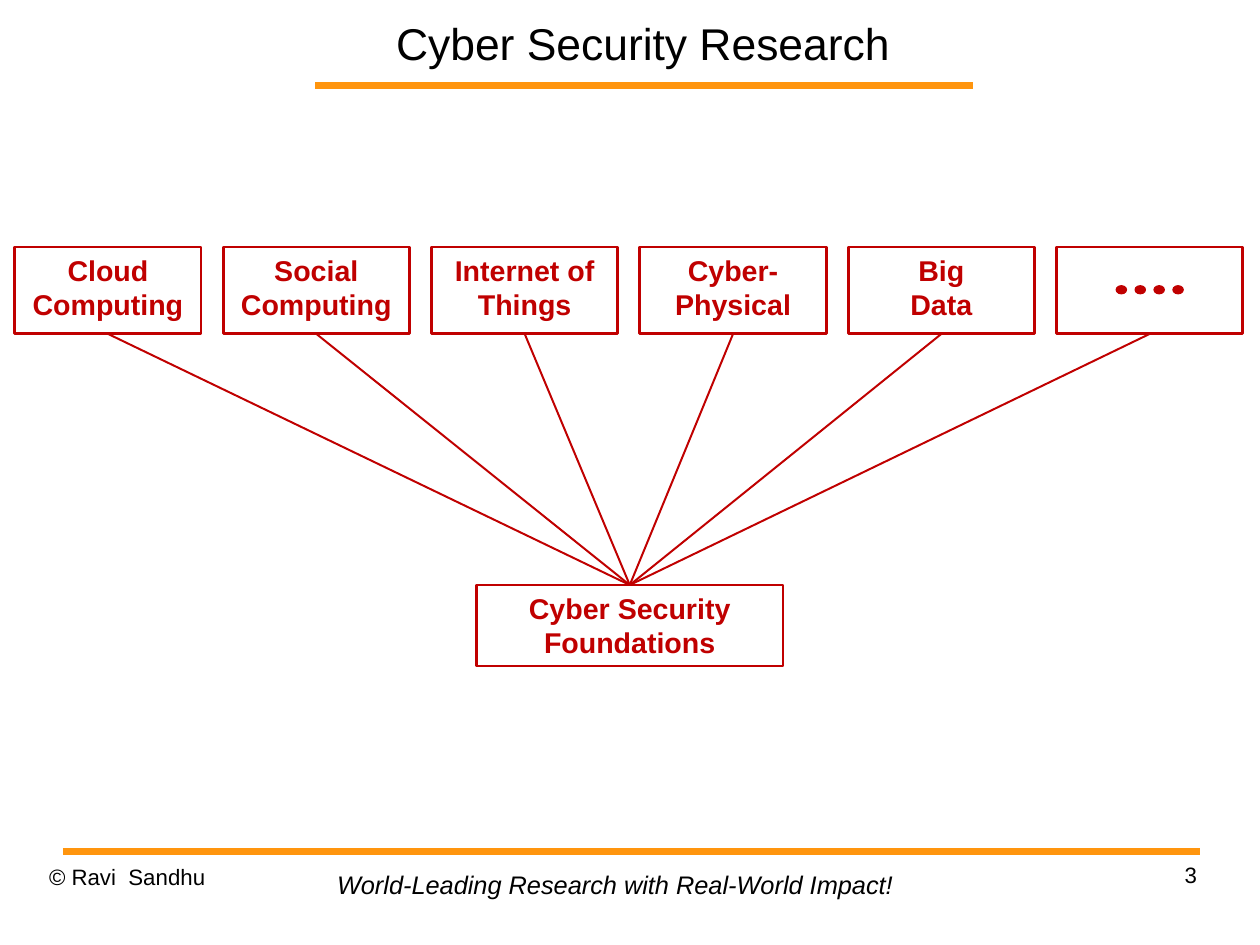
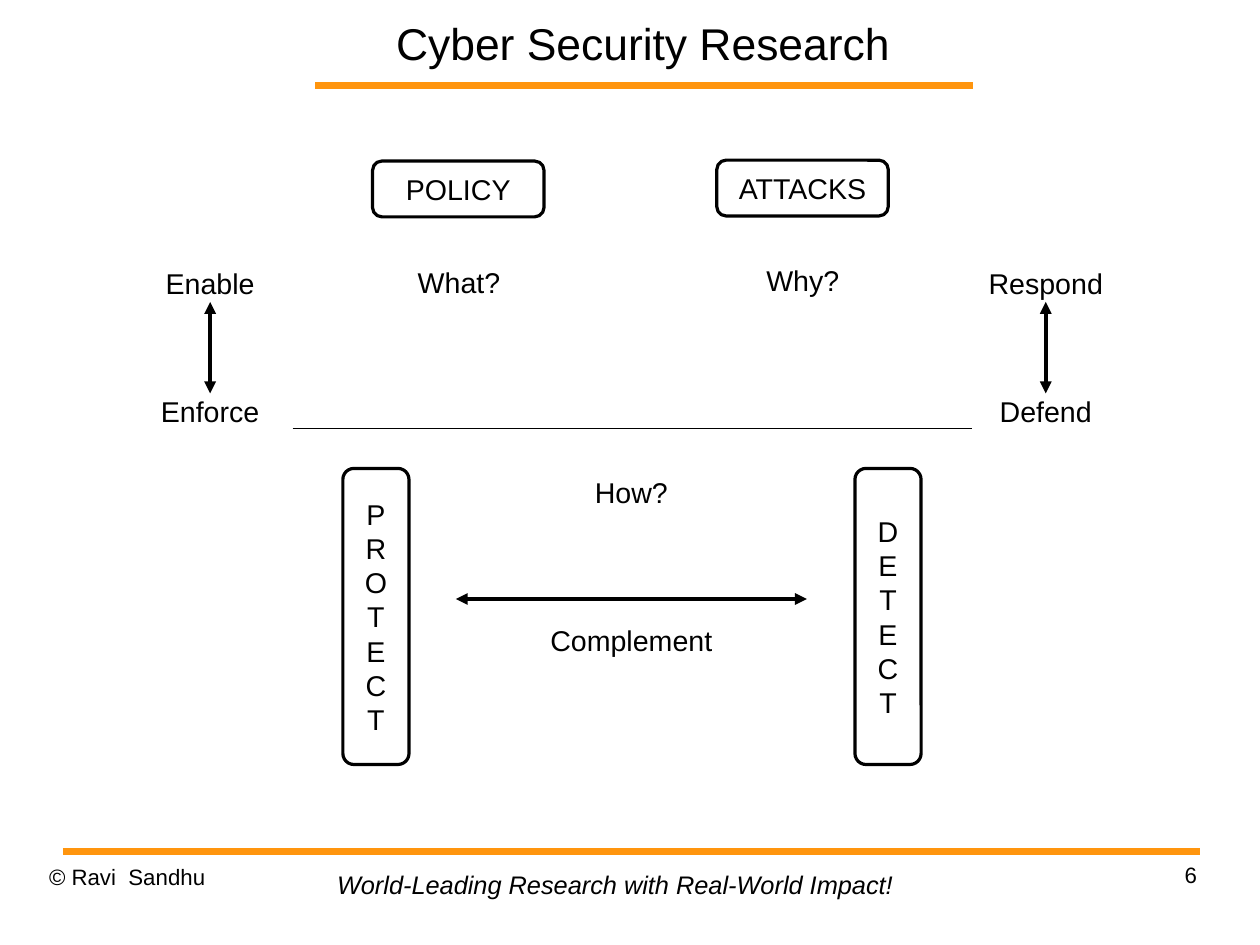
from pptx import Presentation
from pptx.dml.color import RGBColor
from pptx.enum.shapes import MSO_CONNECTOR, MSO_SHAPE
from pptx.enum.text import MSO_ANCHOR, PP_ALIGN
from pptx.oxml.ns import qn
from pptx.util import Cm, Pt
from lxml import etree

RECTANGLE = MSO_SHAPE.RECTANGLE
ROUNDED = MSO_SHAPE.ROUNDED_RECTANGLE
OVAL = MSO_SHAPE.OVAL
STRAIGHT = MSO_CONNECTOR.STRAIGHT
TOP, MIDDLE = MSO_ANCHOR.TOP, MSO_ANCHOR.MIDDLE
LEFT, CENTER, RIGHT = PP_ALIGN.LEFT, PP_ALIGN.CENTER, PP_ALIGN.RIGHT
TOP_SIDE, BOTTOM_SIDE = 0, 2

FONT = "Arial"
BLACK, WHITE, ORANGE, RED = "000000", "FFFFFF", "FF950E", "C00000"

TITLE = "Cyber Security Research"
COPYRIGHT = "© Ravi  Sandhu"
SLOGAN = "World-Leading Research with Real-World Impact!"
SHARED_RULES = [(7.01, 1.9, 21.62, 1.9), (1.4, 18.92, 26.67, 18.92)]

AREAS = [
    ["Cloud Computing"],
    ["Social Computing"],
    ["Internet of Things"],
    ["Cyber-Physical"],
    ["Big", "Data"],
    [],
]
AREA_LEFT, AREA_TOP, AREA_WIDTH, AREA_HEIGHT, AREA_PITCH = 0.33, 5.49, 4.14, 1.93, 4.63
FOUNDATION = ["Cyber Security", "Foundations"]
FOUNDATION_BOX = (10.59, 13, 6.81, 1.8)
DOT_COUNT, DOT_WIDTH, DOT_HEIGHT, DOT_PITCH, DOT_TOP = 4, 0.23, 0.18, 0.42, 6.35

GOALS = [("POLICY", 8.28, 3.58), ("ATTACKS", 15.93, 3.56)]
GOAL_SIZE = (3.81, 1.24)
MEANS = [("PROTECT", 7.62, 10.41), ("DETECT", 19, 10.41)]
MEANS_SIZE = (1.47, 6.58)
LABELS = [
    ("What?", 10.2, 5.77, 2.36),
    ("Why?", 17.84, 5.72, 2.16),
    ("How?", 14.03, 10.44, 2.16),
    ("Complement", 14.03, 13.72, 4.14),
    ("Enable", 4.67, 5.79, 2.51),
    ("Enforce", 4.67, 8.64, 2.72),
    ("Respond", 23.24, 5.79, 3.07),
    ("Defend", 23.24, 8.64, 2.59),
]
LABEL_HEIGHT = 1.02
DIVIDER = (6.5, 9.53, 21.59, 9.53)
ARROWS = [
    (10.13, 13.31, 17.93, 13.31),
    (4.67, 8.74, 4.67, 6.71),
    (23.24, 8.74, 23.24, 6.71),
]


def color(value):
    return RGBColor.from_string(value)


def write(shape, lines, size, ink=BLACK, align=CENTER, anchor=TOP, bold=False,
          italic=False, wrap=True, inset=None, spacing=None):
    frame = shape.text_frame
    frame.word_wrap = wrap
    frame.vertical_anchor = anchor
    if inset is not None:
        frame.margin_left = frame.margin_right = Cm(inset)
        frame.margin_top = frame.margin_bottom = Cm(inset)
    for index, line in enumerate(lines):
        paragraph = frame.add_paragraph() if index else frame.paragraphs[0]
        paragraph.alignment = align
        if spacing:
            paragraph.line_spacing = spacing
        run = paragraph.add_run()
        run.text = line
        run.font.name = FONT
        run.font.size = Pt(size)
        run.font.bold = bold
        run.font.italic = italic
        run.font.color.rgb = color(ink)


def add_text(slide, box, text, size, **style):
    shape = slide.shapes.add_textbox(*map(Cm, box))
    write(shape, [text], size, **style)


def add_box(slide, kind, box, line, width, fill=None):
    shape = slide.shapes.add_shape(kind, *map(Cm, box))
    shape.shadow.inherit = False
    if fill:
        shape.fill.solid()
        shape.fill.fore_color.rgb = color(fill)
    else:
        shape.fill.background()
    shape.line.color.rgb = color(line)
    shape.line.width = Pt(width)
    return shape


def add_line(slide, ends, ink, width, arrows=False):
    connector = slide.shapes.add_connector(STRAIGHT, *map(Cm, ends))
    connector.line.color.rgb = color(ink)
    connector.line.width = Pt(width)
    properties = connector._element.spPr
    if arrows:
        outline = properties.find(qn("a:ln"))
        for end in ("a:headEnd", "a:tailEnd"):
            etree.SubElement(outline, qn(end)).set("type", "triangle")
    etree.SubElement(properties, qn("a:effectLst"))
    return connector


def add_base_slide(presentation, number):
    slide = presentation.slides.add_slide(presentation.slide_layouts[6])
    for ends in SHARED_RULES:
        add_line(slide, ends, ORANGE, 4.31)
    add_text(slide, (20.07, 19.13, 6.53, 1.45), number, 14, align=RIGHT, inset=0, spacing=1.01)
    add_text(slide, (1.09, 19.18, 6.53, 1.45), COPYRIGHT, 14, align=LEFT, inset=0, spacing=1.01)
    add_text(slide, (7.24, 19.18, 12.9, 0.94), SLOGAN, 16, align=LEFT, italic=True, wrap=False)
    add_text(slide, (6.12, 0, 16.33, 1.9), TITLE, 28, anchor=MIDDLE, inset=0)
    return slide


def build_areas(presentation):
    slide = add_base_slide(presentation, "3")
    foundation = add_box(slide, RECTANGLE, FOUNDATION_BOX, RED, 1.75)
    write(foundation, FOUNDATION, 18, RED, bold=True)

    area_boxes = []
    for index, lines in enumerate(AREAS):
        left = AREA_LEFT + index * AREA_PITCH
        area = add_box(slide, RECTANGLE, (left, AREA_TOP, AREA_WIDTH, AREA_HEIGHT), RED, 1.75)
        write(area, lines, 18, RED, bold=True)
        area_boxes.append(area)

    dots_width = (DOT_COUNT - 1) * DOT_PITCH + DOT_WIDTH
    dots_left = left + (AREA_WIDTH - dots_width) / 2
    for index in range(DOT_COUNT):
        dot = (dots_left + index * DOT_PITCH, DOT_TOP, DOT_WIDTH, DOT_HEIGHT)
        add_box(slide, OVAL, dot, RED, 0.75, RED)

    for area in area_boxes:
        connector = add_line(slide, (0, 0, 1, 1), RED, 1.25)
        connector.begin_connect(area, BOTTOM_SIDE)
        connector.end_connect(foundation, TOP_SIDE)


def build_objectives(presentation):
    slide = add_base_slide(presentation, "6")
    for entries, size, stacked in ((GOALS, GOAL_SIZE, False), (MEANS, MEANS_SIZE, True)):
        for text, left, top in entries:
            shape = add_box(slide, ROUNDED, (left, top, *size), BLACK, 2, WHITE)
            write(shape, [text], 18, anchor=MIDDLE, wrap=False)
            if stacked:
                shape.text_frame._txBody.bodyPr.set("vert", "wordArtVert")
    for text, center, top, width in LABELS:
        add_text(slide, (center - width / 2, top, width, LABEL_HEIGHT), text, 18, wrap=False)
    add_line(slide, DIVIDER, BLACK, 0.75)
    for ends in ARROWS:
        add_line(slide, ends, BLACK, 2.5, arrows=True)


def main():
    presentation = Presentation()
    presentation.slide_width = Cm(28)
    presentation.slide_height = Cm(21)
    build_areas(presentation)
    build_objectives(presentation)
    presentation.save("out.pptx")


if __name__ == "__main__":
    main()
